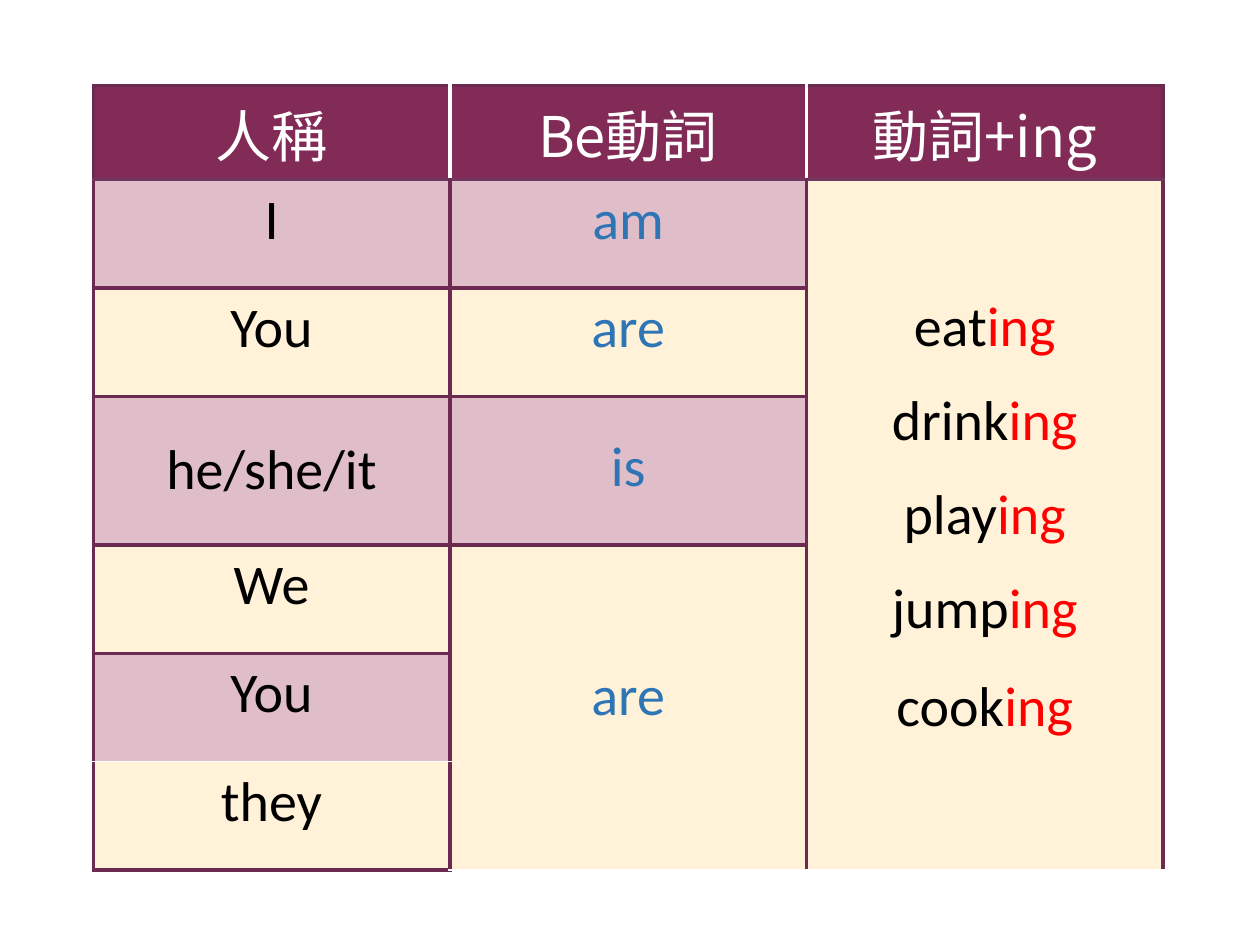
from pptx import Presentation, util as u
from pptx.dml.color import RGBColor
from pptx.enum import text
from pptx.oxml import ns
from lxml import etree

PLUM, PINK, CREAM = "812B56", "E0BEC9", "FFF2D9"
EDGE, RULE, WHITE = "6C2A50", "71375E", "FFFFFF"
BLACK, BLUE, RED = "000000", "2E75B6", "FF0000"
CJK, LATIN = "Noto Sans CJK JP", "Calibri"
HEADS = ["人稱", "Be動詞", "動詞+ing"]
NAMES = ["I", "You", "he/she/it", "We", "You", "they"]
VERBS = {1: "am", 2: "are", 3: "is", 4: "are"}
STEMS = ["eat", "drink", "play", "jump", "cook"]
HIGHS = [0.69, 0.86, 0.86, 1.18, 0.86, 0.86, 0.86]
WIDE = 2.83
LAST = len(HIGHS) - 1


def paint(hue):
    return RGBColor.from_string(hue)


def border(cell, side, hue, width=2.25):
    line = etree.SubElement(cell._tc.get_or_add_tcPr(), ns.qn("a:ln" + side),
                            w=str(u.Pt(width)))
    fill = etree.SubElement(line, ns.qn("a:solidFill"))
    etree.SubElement(fill, ns.qn("a:srgbClr"), val=hue)


def dress(cell, hue, **sides):
    for side in "LRTB":
        if side in sides:
            border(cell, side, *sides[side])
    cell.fill.solid()
    cell.fill.fore_color.rgb = paint(hue)


def write(para, parts, face=LATIN):
    para.alignment = text.PP_ALIGN.CENTER
    for words, hue in parts:
        run = para.add_run()
        run.text = words
        run.font.size = u.Pt(32)
        run.font.bold = False
        run.font.name = face
        run.font.color.rgb = paint(hue)
        east = etree.SubElement(run.font._element, ns.qn("a:ea"))
        east.set("typeface", CJK)


def label(cell, words, hue, drop=0.05, face=LATIN):
    cell.margin_top = u.Inches(drop)
    write(cell.text_frame.paragraphs[0], [(words, hue)], face)


def head(grid):
    for col, words in enumerate(HEADS):
        cell = grid.cell(0, col)
        dress(cell, PLUM, T=(EDGE,), B=(RULE,),
              L=(WHITE if col else EDGE,), R=(WHITE if col < 2 else EDGE,))
        label(cell, words, WHITE, face=CJK)


def people(grid):
    for row, words in enumerate(NAMES, 1):
        cell = grid.cell(row, 0)
        top = (RULE,) if row == 1 else (WHITE, 1) if row == LAST else (EDGE,)
        low = (WHITE, 1) if row == LAST - 1 else (EDGE,)
        dress(cell, PINK if row % 2 else CREAM, L=(EDGE,), R=(EDGE,), T=top, B=low)
        label(cell, words, BLACK, 0.32 if row == 3 else 0.05)


def verbs(grid):
    drops = {3: 0.29, 4: 0.93}
    for row in range(1, LAST + 1):
        sides = {"L": (EDGE,), "R": (EDGE,)}
        if row <= 4:
            sides["T"] = (RULE if row == 1 else EDGE,)
        if row < 4 or row == LAST:
            sides["B"] = (EDGE,)
        dress(grid.cell(row, 1), PINK if row in (1, 3) else CREAM, **sides)
    grid.cell(4, 1).merge(grid.cell(LAST, 1))
    for row, words in VERBS.items():
        label(grid.cell(row, 1), words, BLUE, drops.get(row, 0.05))


def forms(grid):
    for row in range(1, LAST + 1):
        sides = {"L": (EDGE,), "R": (EDGE,)}
        if row == 1:
            sides["T"] = (RULE,)
        if row == LAST:
            sides["B"] = (EDGE,)
        dress(grid.cell(row, 2), CREAM, **sides)
    cell = grid.cell(1, 2)
    cell.merge(grid.cell(LAST, 2))
    cell.margin_top = u.Inches(0.9)
    frame = cell.text_frame
    for spot, stem in enumerate(STEMS):
        para = frame.add_paragraph() if spot else frame.paragraphs[0]
        if spot:
            para.space_before = u.Pt(17 if stem == "cook" else 14.6)
        write(para, [(stem, BLACK), ("ing", RED)])


def chart(slide, left, top, wide, high):
    grid = slide.shapes.add_table(len(HIGHS), len(HEADS), u.Inches(left), u.Inches(top),
                                  u.Inches(wide), u.Inches(high)).table
    for col in grid.columns:
        col.width = u.Inches(WIDE)
    for row, size in zip(grid.rows, HIGHS):
        row.height = u.Inches(size)
    head(grid)
    people(grid)
    verbs(grid)
    forms(grid)


def main():
    deck = Presentation()
    deck.slide_width, deck.slide_height = u.Inches(10), u.Inches(7.5)
    slide = deck.slides.add_slide(deck.slide_layouts[6])
    chart(slide, 0.74, 0.68, WIDE * len(HEADS), sum(HIGHS))
    deck.save("out.pptx")


if __name__ == "__main__":
    main()
